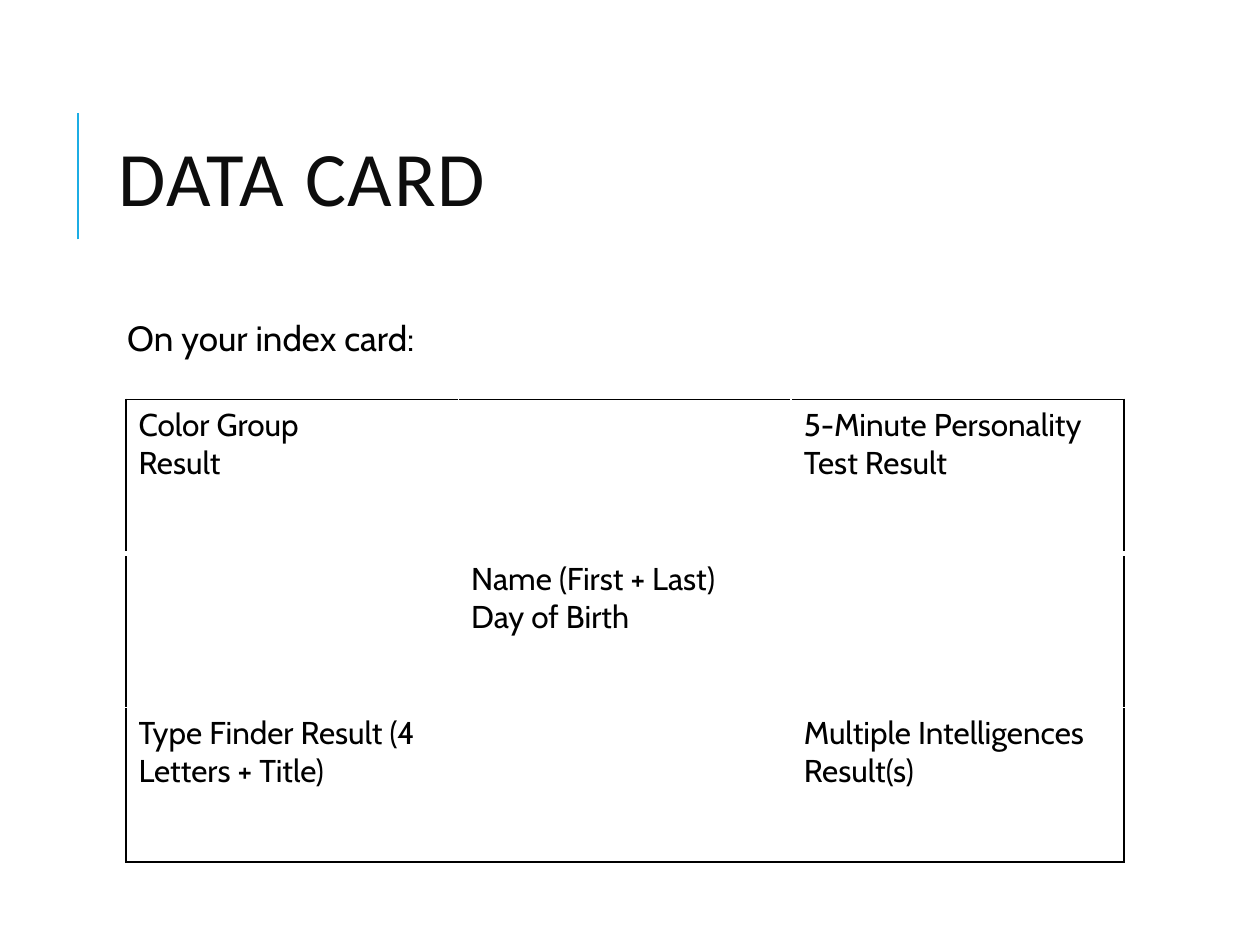
from pptx import Presentation
from pptx.dml.color import RGBColor
from pptx.enum.shapes import MSO_CONNECTOR
from pptx.enum.text import MSO_ANCHOR
from pptx.oxml import parse_xml
from pptx.oxml.ns import nsdecls
from pptx.util import Inches, Pt

# Content
TITLE = "DATA CARD"
PROMPT = "On your index card:"
CARD = [
    [["Color Group", "Result"], [], ["5-Minute Personality Test Result"]],
    [[], ["Name (First + Last)", "Day of Birth"], []],
    [["Type Finder Result (4 Letters + Title)"], [],
     ["Multiple Intelligences Result(s)"]],
]
THEME = {
    "title": ("Calibri", 44, "0D0D0D"),
    "prompt": ("Cabin", 20, "000000"),
    "cell": ("Cabin", 18, "000000"),
    "accent": "1CADE4", "paper": "FFFFFF", "edge": "000000",
}


def rgb(name):
    return RGBColor.from_string(THEME[name])


def style(p, role):
    face, size, color = THEME[role]
    p.font.name, p.font.size = face, Pt(size)
    p.font.color.rgb = RGBColor.from_string(color)


def add_text(slide, box, text, role, inset, anchor):
    tf = slide.shapes.add_textbox(*map(Inches, box)).text_frame
    tf.word_wrap, tf.vertical_anchor = True, anchor
    tf.margin_left = tf.margin_right = Inches(inset)
    tf.margin_top = tf.margin_bottom = Inches(0.05)
    p = tf.paragraphs[0]
    r = p.add_run()
    r.text = text
    style(p, role)
    return p, r


def add_border(cell, side, color, width):
    # Borders must come before the fill in the cell properties
    ln = parse_xml(
        f'<a:{side} {nsdecls("a")} w="{Pt(width)}"><a:solidFill>'
        f'<a:srgbClr val="{color}"/></a:solidFill></a:{side}>')
    cell._tc.get_or_add_tcPr().append(ln)


prs = Presentation()
prs.slide_width, prs.slide_height = Inches(10), Inches(7.5)
s = prs.slides.add_slide(prs.slide_layouts[6])

# Accent line beside the title
rule = s.shapes.add_connector(MSO_CONNECTOR.STRAIGHT, Inches(0.62), Inches(1.9),
                              Inches(0.62), Inches(0.9))
rule.line.color.rgb, rule.line.width = rgb("accent"), Pt(1.5)
rule._element.spPr.append(parse_xml(f'<a:effectLst {nsdecls("a")}/>'))

# Title and prompt
p, r = add_text(s, (0.84, 0.64, 7.97, 1.64), TITLE, "title", 0.1,
                MSO_ANCHOR.MIDDLE)
p.line_spacing = 0.8
r.font._element.set("spc", "100")

p, r = add_text(s, (0.84, 2.5, 7.97, 4.4), PROMPT, "prompt", 0.05,
                MSO_ANCHOR.TOP)
p.line_spacing, p.space_before, p.space_after = 0.9, Pt(12), Pt(2)
pPr = p._p.get_or_add_pPr()
pPr.set("marL", str(Inches(0.12)))
pPr.set("indent", "0")

# Index card: black outer edge, white inner borders
n_rows, n_cols = len(CARD), len(CARD[0])
table = s.shapes.add_table(n_rows, n_cols, Inches(1), Inches(3.17),
                           Inches(7.92), Inches(3.67)).table
table.first_row = table.horz_banding = False
for i, row in enumerate(CARD):
    for j, lines in enumerate(row):
        cell = table.cell(i, j)
        outer = {"lnL": j == 0, "lnR": j == n_cols - 1,
                 "lnT": i == 0, "lnB": i == n_rows - 1}
        for side, is_outer in outer.items():
            width = 3 if i == 0 and side == "lnB" else 1
            add_border(cell, side, THEME["edge" if is_outer else "paper"], width)
        cell.fill.solid()
        cell.fill.fore_color.rgb = rgb("paper")
        cell.text_frame.text = "\n".join(lines)
        for p in cell.text_frame.paragraphs:
            style(p, "cell")

prs.save("out.pptx")
